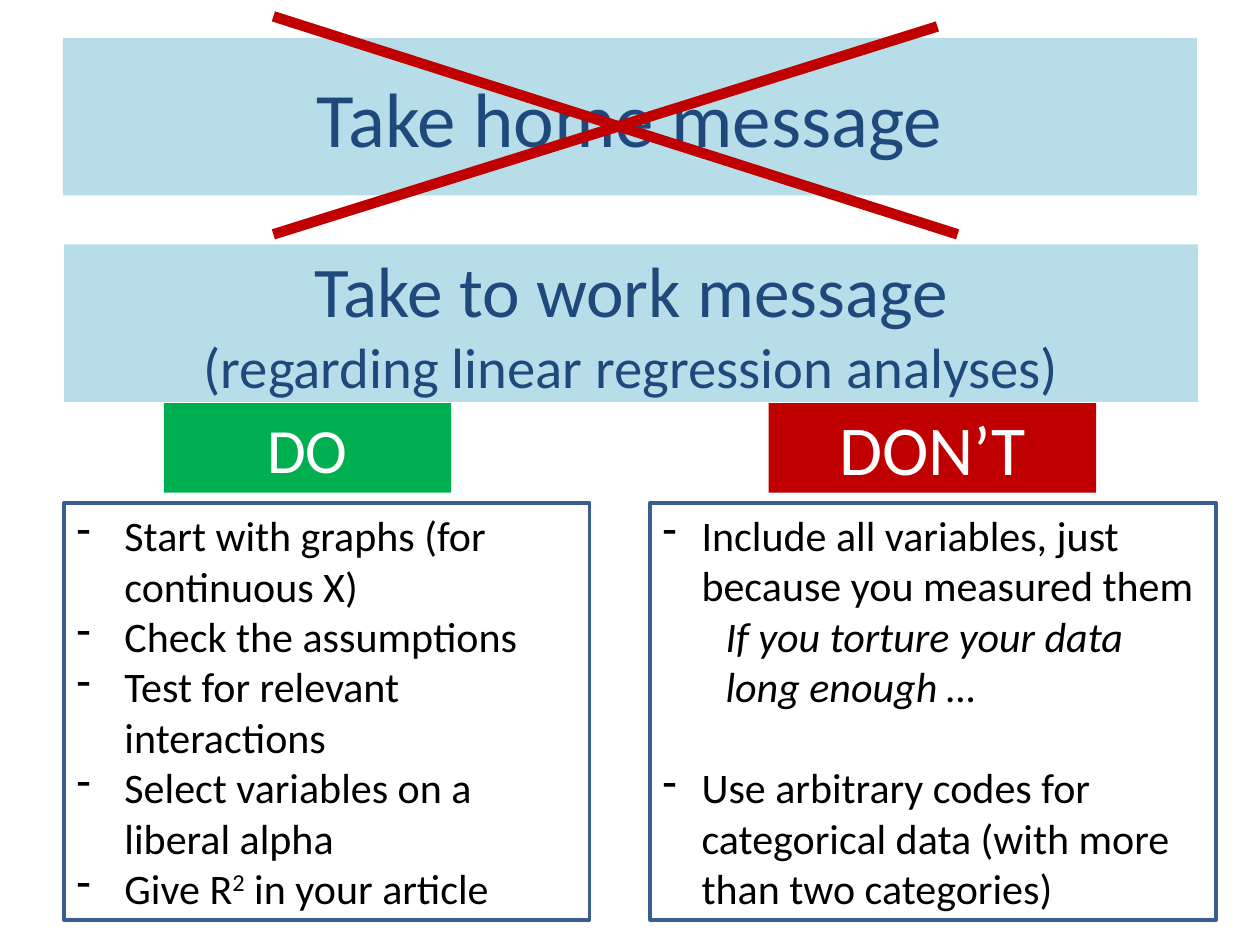
from lxml.etree import SubElement
from pptx import Presentation
from pptx.dml.color import RGBColor
from pptx.enum.shapes import MSO_CONNECTOR, MSO_SHAPE
from pptx.enum.text import MSO_ANCHOR, PP_ALIGN
from pptx.oxml.ns import qn
from pptx.util import Inches, Pt

WHITE = RGBColor(0xFF, 0xFF, 0xFF)
BLACK = RGBColor(0x00, 0x00, 0x00)
PALE_BLUE = RGBColor(0xB7, 0xDE, 0xE8)
NAVY = RGBColor(0x1F, 0x49, 0x7D)
BORDER_BLUE = RGBColor(0x3A, 0x5F, 0x8C)
GREEN = RGBColor(0x00, 0xB0, 0x50)
RED = RGBColor(0xC0, 0x00, 0x00)

DO_ITEMS = [
    "Start with graphs (for continuous X)",
    "Check the assumptions",
    "Test for relevant interactions",
    "Select variables on a liberal alpha",
    "Give R",
]
DONT_ITEMS = [
    "Include all variables, just because you measured them",
    "If you torture your data long enough …",
    "Use arbitrary codes for categorical data (with more than two categories)",
]


def add_box(slide, box, fill, border=None):
    """Add a filled rectangle with an optional border."""
    shape = slide.shapes.add_shape(MSO_SHAPE.RECTANGLE, *map(Inches, box))
    shape.shadow.inherit = False
    shape.fill.solid()
    shape.fill.fore_color.rgb = fill
    if border is None:
        shape.line.fill.background()
    else:
        shape.line.color.rgb = border
        shape.line.width = Pt(2)
    shape.text_frame.word_wrap = True
    shape.text_frame.vertical_anchor = MSO_ANCHOR.MIDDLE
    return shape


def add_paragraphs(shape, texts, sizes, color, align):
    """Write one paragraph per text and return the paragraphs."""
    frame = shape.text_frame
    frame.text = "\n".join(texts)
    for paragraph, size in zip(frame.paragraphs, sizes):
        paragraph.alignment = align
        paragraph.font.name = "Calibri"
        paragraph.font.size = Pt(size)
        paragraph.font.color.rgb = color
    return frame.paragraphs


def add_banner(slide, box, fill, color, lines):
    """Add a filled band with centred (text, size) lines."""
    texts, sizes = zip(*lines)
    add_paragraphs(add_box(slide, box, fill), texts, sizes, color, PP_ALIGN.CENTER)


def add_cross(slide, strokes):
    """Strike out a region with thick red lines."""
    for stroke in strokes:
        line = slide.shapes.add_connector(MSO_CONNECTOR.STRAIGHT, *map(Inches, stroke))
        line.line.color.rgb = RED
        line.line.width = Pt(6)
        SubElement(line._element.spPr, qn("a:effectLst"))


def set_dash(paragraph, indent):
    """Give a paragraph a hanging dash bullet."""
    properties = paragraph._p.get_or_add_pPr()
    properties.set("marL", str(Inches(indent)))
    properties.set("indent", str(-Inches(indent)))
    SubElement(properties, qn("a:buFontTx"))
    SubElement(properties, qn("a:buChar"), char="-")
    default_font = properties.find(qn("a:defRPr"))
    if default_font is not None:
        properties.append(default_font)


def add_list(slide, box, items, indent, plain=()):
    """Add a bordered list, with dashes on all but the plain items."""
    shape = add_box(slide, box, WHITE, BORDER_BLUE)
    paragraphs = add_paragraphs(shape, items, [24] * len(items), BLACK, PP_ALIGN.LEFT)
    for index, paragraph in enumerate(paragraphs):
        if index not in plain:
            set_dash(paragraph, indent)
    return paragraphs


def add_do_list(slide, box):
    """Add the list of advice, ending with a superscript."""
    last = add_list(slide, box, DO_ITEMS, 0.38)[-1]
    exponent = last.add_run()
    exponent.text = "2"
    exponent._r.get_or_add_rPr().set("baseline", "30000")
    last.add_run().text = " in your article"


def add_dont_list(slide, box):
    """Add the list of warnings with an indented italic quote."""
    quote = add_list(slide, box, DONT_ITEMS, 0.31, plain=(1,))[1]
    quote._p.get_or_add_pPr().set("marL", str(Inches(0.5)))
    quote.font.italic = True
    quote.space_after = Pt(29)


def main():
    """Build the slide and save it."""
    presentation = Presentation()
    presentation.slide_width = Inches(10)
    presentation.slide_height = Inches(7.5)
    slide = presentation.slides.add_slide(presentation.slide_layouts[6])
    add_banner(slide, (0.5, 0.3, 9, 1.25), PALE_BLUE, NAVY, [("Take home message", 44)])
    add_banner(slide, (0.51, 1.94, 9, 1.25), PALE_BLUE, NAVY, [
        ("Take to work message", 40.7),
        ("(regarding linear regression analyses)", 32.4),
    ])
    add_cross(slide, [(2.17, 0.13, 7.6, 1.86), (2.17, 1.86, 7.44, 0.21)])
    add_do_list(slide, (0.51, 3.99, 4.17, 3.31))
    add_banner(slide, (1.3, 3.2, 2.28, 0.71), GREEN, WHITE, [("DO", 36)])
    add_banner(slide, (6.1, 3.2, 2.6, 0.71), RED, WHITE, [("DON’T", 40)])
    add_dont_list(slide, (5.16, 3.99, 4.49, 3.31))
    presentation.save("out.pptx")


if __name__ == "__main__":
    main()
